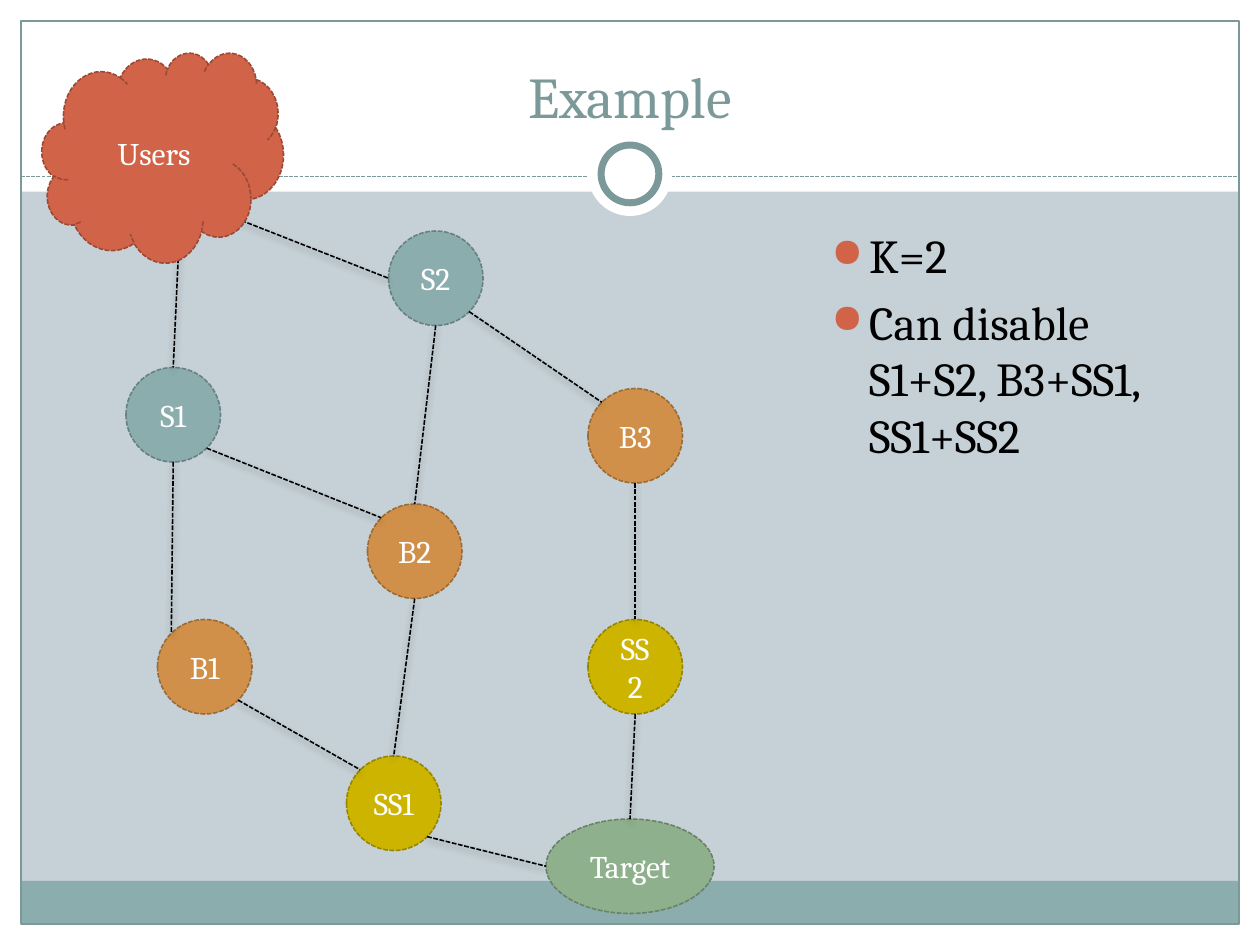
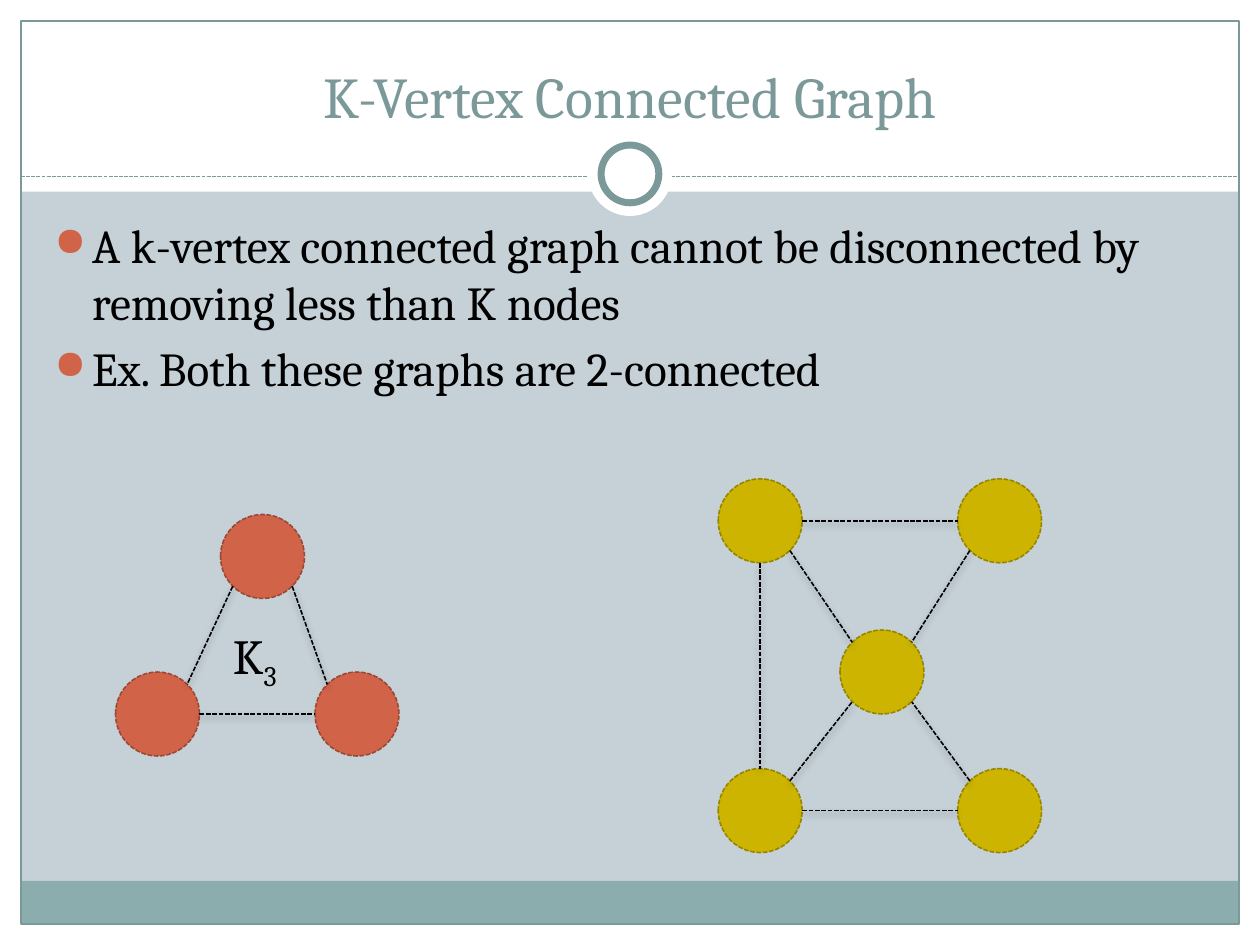
"""Build two slides about vertex-connected graphs."""
import lxml.etree
import pptx
import pptx.dml.color
import pptx.enum.dml
import pptx.enum.shapes
import pptx.enum.text
import pptx.oxml
import pptx.oxml.ns
import pptx.util

COLUMNS, ROWS = 120, 90
WIDTH, HEIGHT = pptx.util.Inches(10), pptx.util.Inches(7.5)
FONT = "Cambria"
WHITE, BLACK, BACKGROUND, BAND, ACCENT = "FFFFFF", "000000", "C5D1D7", "8CADAE", "7C999A"
TEAL, ORANGE, YELLOW, GREEN, RED = (
    (BAND, "688081"), ("D19049", "9B6B36"), ("CCB400", "978500"),
    ("8FB08C", "6A8268"), ("D16349", "9B4936"))
SHAPES = pptx.enum.shapes.MSO_SHAPE
ALIGN = pptx.enum.text.PP_ALIGN
ANCHOR = pptx.enum.text.MSO_ANCHOR
DIAGONAL = 0.5 ** 0.5
SIDES = {
    "top": (0, -1), "bottom": (0, 1), "left": (-1, 0), "right": (1, 0),
    "top left": (-DIAGONAL, -DIAGONAL), "top right": (DIAGONAL, -DIAGONAL),
    "bottom left": (-DIAGONAL, DIAGONAL), "bottom right": (DIAGONAL, DIAGONAL)}


def across(columns):
    """Turn grid columns into a length."""
    return round(WIDTH * columns / COLUMNS)


def down(rows):
    """Turn grid rows into a length."""
    return round(HEIGHT * rows / ROWS)


def color(value):
    """Turn a hex string into a colour."""
    return pptx.dml.color.RGBColor.from_string(value)


def qualified(tag):
    """Give the full name of a drawing tag."""
    return pptx.oxml.ns.qn(tag)


def place(box):
    """Turn left, top, width and height on the grid into lengths."""
    left, top, width, height = box
    return across(left), down(top), across(width), down(height)


def set_line(line, value, width, dashed=False):
    """Format an outline or a connector line."""
    line.color.rgb = color(value)
    line.width = pptx.util.Pt(width)
    if dashed:
        line.dash_style = pptx.enum.dml.MSO_LINE.SQUARE_DOT


def add_figure(slide, kind, box, fill=None, line=None, width=0.75, dashed=False):
    """Add a preset shape with a plain fill and outline."""
    shape = slide.shapes.add_shape(kind, *place(box))
    shape.shadow.inherit = False
    if fill:
        shape.fill.solid()
        shape.fill.fore_color.rgb = color(fill)
    else:
        shape.fill.background()
    if line:
        set_line(shape.line, line, width, dashed)
    else:
        shape.line.fill.background()
    return shape


def add_line(slide, start, end, value=BLACK, width=0.9, shadow=True):
    """Add a dashed line between two points given as lengths."""
    connector = slide.shapes.add_connector(
        pptx.enum.shapes.MSO_CONNECTOR.STRAIGHT, *start, *end)
    set_line(connector.line, value, width, dashed=True)
    properties = connector._element.spPr
    effects = lxml.etree.SubElement(properties, qualified("a:effectLst"))
    if shadow:
        outer = lxml.etree.SubElement(
            effects, qualified("a:outerShdw"), blurRad=str(pptx.util.Pt(4)),
            dist=str(pptx.util.Pt(2)), dir="5400000", rotWithShape="0")
        tint = lxml.etree.SubElement(outer, qualified("a:srgbClr"), val=BLACK)
        lxml.etree.SubElement(tint, qualified("a:alpha"), val="35000")


def set_bullet(paragraph):
    """Give a paragraph a round bullet with a hanging indent."""
    properties = paragraph._p.get_or_add_pPr()
    indent = pptx.util.Inches(0.3)
    properties.set("marL", str(indent))
    properties.set("indent", str(-indent))
    tint = lxml.etree.SubElement(properties, qualified("a:buClr"))
    lxml.etree.SubElement(tint, qualified("a:srgbClr"), val=RED[0])
    lxml.etree.SubElement(properties, qualified("a:buSzPct"), val="85000")
    lxml.etree.SubElement(properties, qualified("a:buChar"), char="●")


def write(shape, text, size=18, value=WHITE, align=ALIGN.CENTER,
          anchor=ANCHOR.MIDDLE, bullets=False, subscript=""):
    """Write one paragraph for each line of the text."""
    frame = shape.text_frame
    frame.word_wrap = True
    frame.vertical_anchor = anchor
    for number, content in enumerate(text.split("\n")):
        paragraph = frame.add_paragraph() if number else frame.paragraphs[0]
        paragraph.alignment = align
        if bullets:
            paragraph.space_before = pptx.util.Pt(size * 0.2)
            set_bullet(paragraph)
        for part in filter(None, (content, subscript)):
            run = paragraph.add_run()
            run.text = part
            run.font.name = FONT
            run.font.size = pptx.util.Pt(size)
            run.font.color.rgb = color(value)
            if part == subscript:
                run.font._element.set("baseline", "-25000")


def add_text(slide, text, box, **formatting):
    """Add a text box."""
    write(slide.shapes.add_textbox(*place(box)), text, **formatting)


def add_body(slide, text, box):
    """Add the bulleted body text."""
    add_text(slide, text, box, size=27, value=BLACK, align=ALIGN.LEFT,
             anchor=ANCHOR.TOP, bullets=True)


def add_node(slide, box, colors, text="", kind=SHAPES.OVAL):
    """Add a graph node with a dashed outline."""
    shape = add_figure(slide, kind, box, *colors, width=0.9, dashed=True)
    if text:
        write(shape, text)
    return shape


def site(node, side):
    """Find the point on a node's outline at the named side."""
    horizontal, vertical = SIDES[side]
    return (round(node.left + node.width * (1 + horizontal) / 2),
            round(node.top + node.height * (1 + vertical) / 2))


def add_edges(slide, nodes, edges):
    """Join nodes by lines between their named sides."""
    for start, start_side, end, end_side in edges:
        add_line(slide, site(nodes[start], start_side), site(nodes[end], end_side))


def add_base(presentation, title):
    """Add a slide with the shared frame, bands, ring and title."""
    slide = presentation.slides.add_slide(presentation.slide_layouts[6])
    slide.background.fill.solid()
    slide.background.fill.fore_color.rgb = color(BACKGROUND)
    margin = 2
    inner = (margin, margin, COLUMNS - 2 * margin, ROWS - 2 * margin)
    for box in ((0, ROWS - margin, COLUMNS, margin), (0, 0, COLUMNS, 18.25),
                (0, 0, margin, ROWS), (COLUMNS - margin, 0, margin, ROWS)):
        add_figure(slide, SHAPES.RECTANGLE, box, WHITE)
    add_figure(slide, SHAPES.RECTANGLE, (margin, 83.9, inner[2], 4.1), BAND)
    add_figure(slide, SHAPES.RECTANGLE, inner, line=ACCENT)
    rule = down(16.8)
    add_line(slide, (across(margin), rule), (across(COLUMNS - margin), rule),
             ACCENT, 0.75, shadow=False)
    for size, line in ((8, None), (5.5, ACCENT)):
        box = ((COLUMNS - size) / 2, 16.57 - size / 2, size, size)
        add_figure(slide, SHAPES.OVAL, box, WHITE, line, width=4)
    add_text(slide, title, (4, 3, 112, 10), size=33, value=ACCENT, anchor=ANCHOR.BOTTOM)
    return slide


def add_example(presentation):
    """Add the slide with the network from users to target."""
    slide = add_base(presentation, "Example")
    add_body(slide, "K=2\nCan disable S1+S2, B3+SS1, SS1+SS2", (78, 21, 36, 59.4))
    places = (
        ("S1", 12, 35, TEAL), ("S2", 37, 22, TEAL), ("B1", 15, 59, ORANGE),
        ("B2", 35, 48, ORANGE), ("B3", 56, 37, ORANGE),
        ("SS1", 33, 72, YELLOW), ("SS2", 56, 59, YELLOW))
    nodes = {name: add_node(slide, (left, top, 9, 9), colors, name)
             for name, left, top, colors in places}
    nodes["Target"] = add_node(slide, (52, 78, 16, 9), GREEN, "Target")
    add_line(slide, (across(23), down(21)), site(nodes["S2"], "left"))
    add_line(slide, (across(17), down(24)), site(nodes["S1"], "top"))
    add_edges(slide, nodes, (
        ("S1", "bottom", "B1", "top left"),
        ("S1", "bottom right", "B2", "top left"),
        ("S2", "bottom", "B2", "top"),
        ("S2", "bottom right", "B3", "top left"),
        ("B1", "bottom right", "SS1", "top left"),
        ("B2", "bottom", "SS1", "top"),
        ("B3", "bottom", "SS2", "top"),
        ("SS2", "bottom", "Target", "top"),
        ("SS1", "bottom right", "Target", "left")))
    add_node(slide, (4, 5, 23, 20), RED, "Users", SHAPES.CLOUD)


def add_graph(slide, places, colors, edges):
    """Add unlabelled nodes and the edges between them."""
    nodes = {name: add_node(slide, (left, top, 8, 8), colors)
             for name, (left, top) in places.items()}
    add_edges(slide, nodes, edges)


def add_definition(presentation):
    """Add the slide that defines a k-vertex connected graph."""
    slide = add_base(presentation, "K-Vertex Connected Graph")
    add_body(slide, "A k-vertex connected graph cannot be disconnected by removing "
             "less than K nodes\nEx. Both these graphs are 2-connected",
             (4, 20, 111.6, 60))
    add_graph(slide, {"east": (30, 64), "west": (11, 64), "peak": (21, 49)}, RED, (
        ("peak", "bottom left", "west", "top right"),
        ("peak", "bottom right", "east", "top left"),
        ("west", "right", "east", "left")))
    left, right, top, bottom = 68.4, 91.2, 45.6, 73.2
    corners = {"top left": (left, top), "top right": (right, top),
               "bottom right": (right, bottom), "bottom left": (left, bottom)}
    opposite = dict(zip(corners, ("bottom right", "bottom left", "top left", "top right")))
    spokes = [(corner, opposite[corner], "hub", corner) for corner in corners]
    add_graph(slide, {"hub": (80, 60), **corners}, YELLOW, spokes + [
        ("top left", "right", "top right", "left"),
        ("bottom left", "right", "bottom right", "left"),
        ("top left", "bottom", "bottom left", "top")])
    add_text(slide, "K", (21, 59, 8, 6.9), size=28, value=BLACK,
             align=ALIGN.LEFT, anchor=ANCHOR.TOP, subscript="3")


def main():
    """Build and save the presentation."""
    presentation = pptx.Presentation()
    presentation.slide_width, presentation.slide_height = WIDTH, HEIGHT
    add_example(presentation)
    add_definition(presentation)
    presentation.save("out.pptx")


if __name__ == "__main__":
    main()
